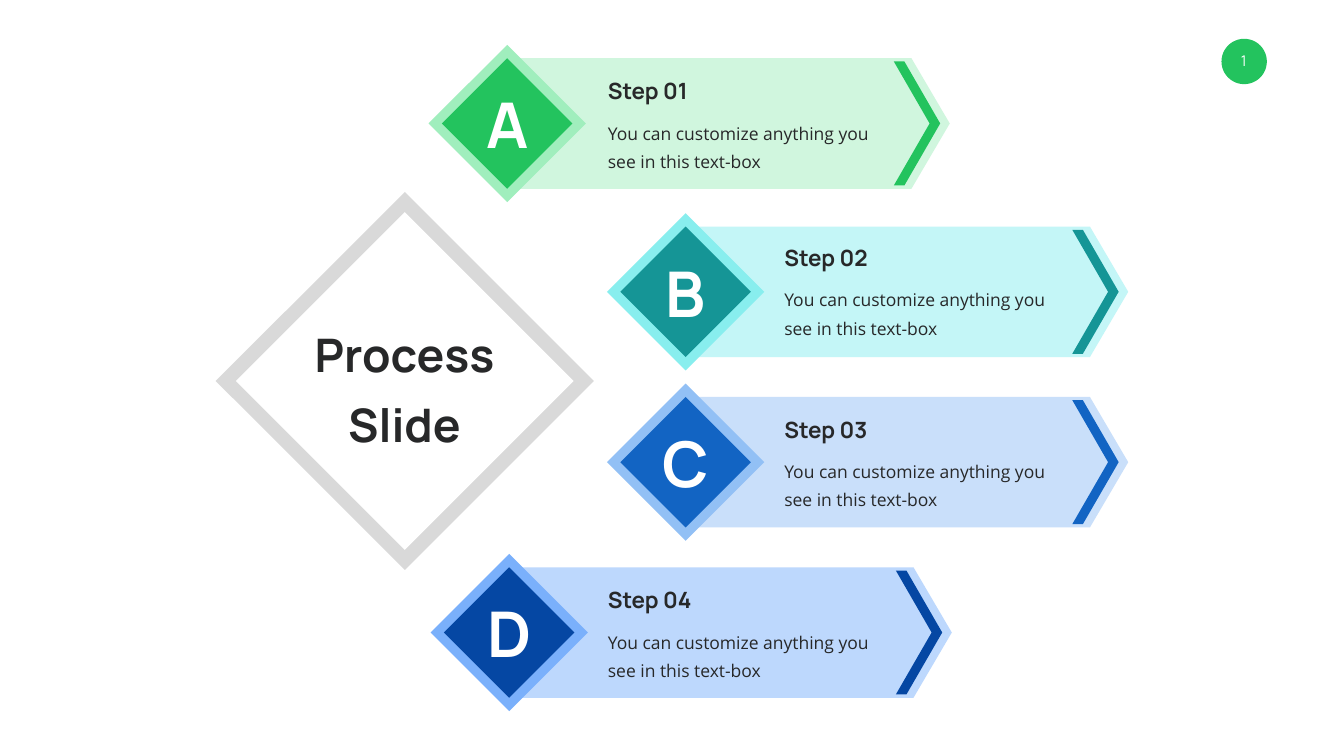
from dataclasses import dataclass

from pptx import Presentation
from pptx.dml.color import RGBColor
from pptx.enum.shapes import MSO_SHAPE
from pptx.enum.text import MSO_ANCHOR, MSO_AUTO_SIZE, PP_ALIGN
from pptx.util import Inches, Pt

OVAL = MSO_SHAPE.OVAL
TOP, MIDDLE, BOTTOM = MSO_ANCHOR.TOP, MSO_ANCHOR.MIDDLE, MSO_ANCHOR.BOTTOM
LEFT, CENTER = PP_ALIGN.LEFT, PP_ALIGN.CENTER
GROW = MSO_AUTO_SIZE.SHAPE_TO_FIT_TEXT

WHITE, INK, GREY, GREEN = "FFFFFF", "272829", "D9D9D9", "23C35E"
BODY = "You can customize anything you see in this text-box"

# Font formats by role
TITLE = {"name": "Manrope", "size": Pt(66), "bold": True}
HEADING = {"name": "Manrope", "size": Pt(32), "bold": True}
LETTER = {"name": "Manrope", "size": Pt(90), "bold": True}
DETAIL = {"name": "Open Sans", "size": Pt(25), "bold": False}
NUMBER = {"name": "Manrope", "size": Pt(21), "bold": False}

# Step geometry, measured from the centre of its diamond
BAND_HALF, HALO_HALF = 1.295, 1.56
BAND = [(8.02, -BAND_HALF), (8.78, 0), (8.02, BAND_HALF),
        (0, BAND_HALF), (0, -BAND_HALF)]
CHEVRON = [(8.38, 0), (7.67, 1.23), (7.88, 1.23),
           (8.59, 0), (7.88, -1.23), (7.67, -1.23)]


@dataclass
class Step:
    letter: str
    heading: str
    x: float
    y: float
    text_left: float
    heading_top: float
    heading_width: float
    strong: str
    halo: str
    pale: str


STEPS = [
    Step("A", "Step 01", 10.06, 2.45, 11.96, 1.48, 1.79, GREEN, "A0EEBD", "D0F6DE"),
    Step("B", "Step 02", 13.6, 5.79, 15.46, 4.78, 1.88, "159596", "88EEEE", "C4F6F7"),
    Step("C", "Step 03", 13.6, 9.17, 15.46, 8.19, 1.9, "1264C3", "92C0F5", "C9DFFA"),
    Step("D", "Step 04", 10.1, 12.55, 11.96, 11.58, 1.92, "0547A3", "7AB0FB", "BDD8FD"),
]


def rgb(color: str) -> RGBColor:
    return RGBColor.from_string(color)


def paint(shape, color: str) -> None:
    shape.shadow.inherit = False
    shape.fill.solid()
    shape.fill.fore_color.rgb = rgb(color)
    shape.line.fill.background()


def polygon(slide, x: float, y: float, offsets: list, color: str) -> None:
    points = [(Inches(x + dx), Inches(y + dy)) for dx, dy in offsets]
    builder = slide.shapes.build_freeform(*points[0])
    builder.add_line_segments(points[1:], close=True)
    paint(builder.convert_to_shape(), color)


def diamond(slide, x: float, y: float, half: float, color: str) -> None:
    polygon(slide, x, y, [(0, half), (-half, 0), (0, -half), (half, 0)], color)


def write(shape, lines: list, font: dict, color: str, align=LEFT, anchor=TOP,
          wrap: bool = False, spacing=None) -> None:
    frame = shape.text_frame
    frame.text = "\n".join(lines)
    frame.word_wrap = wrap
    frame.auto_size = GROW
    frame.vertical_anchor = anchor
    for paragraph in frame.paragraphs:
        paragraph.alignment = align
        paragraph.line_spacing = spacing
        for run in paragraph.runs:
            for attribute, value in font.items():
                setattr(run.font, attribute, value)
            run.font.color.rgb = rgb(color)


def text_box(slide, left: float, top: float, width: float, height: float):
    return slide.shapes.add_textbox(*map(Inches, (left, top, width, height)))


def draw_step(slide, step: Step) -> None:
    polygon(slide, step.x, step.y, BAND, step.pale)
    polygon(slide, step.x, step.y, CHEVRON, step.strong)
    diamond(slide, step.x, step.y, HALO_HALF, step.halo)
    diamond(slide, step.x, step.y, BAND_HALF, step.strong)

    heading = text_box(slide, step.text_left, step.heading_top, step.heading_width, 0.64)
    write(heading, [step.heading], HEADING, INK, anchor=BOTTOM)
    detail = text_box(slide, step.text_left, step.heading_top + 0.75, 5.92, 1.2)
    write(detail, [BODY], DETAIL, INK, wrap=True, spacing=Pt(41))
    letter = text_box(slide, step.x - 0.55, step.y - 0.81, 1.1, 1.62)
    write(letter, [step.letter], LETTER, WHITE, align=CENTER, anchor=MIDDLE)


def draw_page_number(slide) -> None:
    badge = slide.shapes.add_shape(OVAL, *map(Inches, (24.23, 0.77, 0.9, 0.9)))
    paint(badge, GREEN)
    number = text_box(slide, 24.35, 0.9, 0.79, 0.61)
    write(number, ["1"], NUMBER, WHITE, align=CENTER, wrap=True)
    margins = {"margin_left": 0.1, "margin_top": 0.13,
               "margin_right": 0.25, "margin_bottom": 0.1}
    for side, length in margins.items():
        setattr(number.text_frame, side, Inches(length))


def draw_title(slide) -> None:
    diamond(slide, 8.03, 7.56, 3.75, GREY)
    diamond(slide, 8.03, 7.56, 3.35, WHITE)
    title = slide.shapes.title
    place = {"left": 6.09, "top": 6.15, "width": 3.87, "height": 2.83}
    for side, length in place.items():
        setattr(title, side, Inches(length))
    write(title, ["Process", "Slide"], TITLE, INK, align=CENTER, anchor=MIDDLE,
          spacing=Pt(100))
    # Bring the title in front of its diamond
    slide.shapes.element.append(title.element)


def main() -> None:
    deck = Presentation()
    deck.slide_width, deck.slide_height = Inches(26.66), Inches(15)
    slide = deck.slides.add_slide(deck.slide_layouts[5])
    draw_page_number(slide)
    for step in STEPS:
        draw_step(slide, step)
    draw_title(slide)
    deck.save("out.pptx")


if __name__ == "__main__":
    main()
